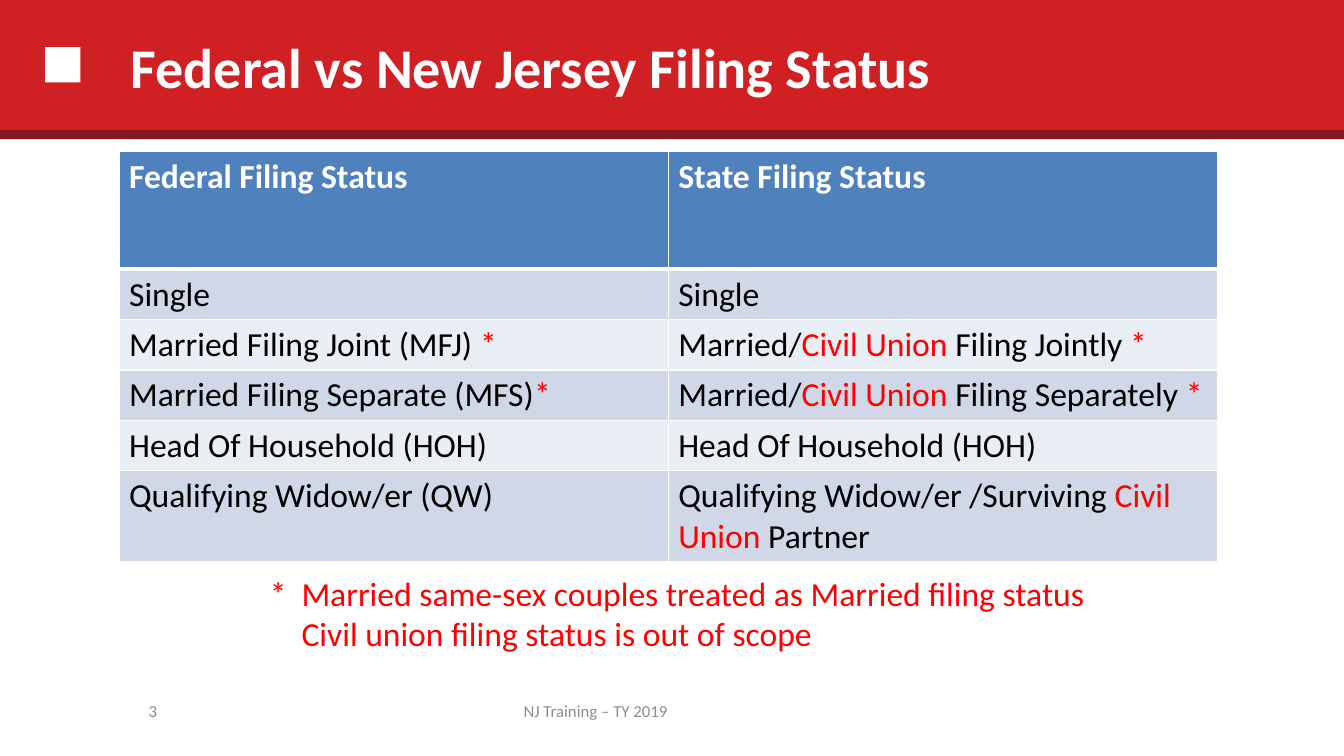
import pptx
import pptx.dml.color
import pptx.enum.shapes
import pptx.enum.text
import pptx.oxml
import pptx.oxml.ns
import pptx.util

Cm = pptx.util.Cm
Pt = pptx.util.Pt
RGBColor = pptx.dml.color.RGBColor
Align = pptx.enum.text.PP_ALIGN
Anchor = pptx.enum.text.MSO_ANCHOR

RED = RGBColor(0xCF, 0x21, 0x24)
DARK_RED = RGBColor(0x84, 0x17, 0x21)
ACCENT = RGBColor(0xFF, 0x00, 0x00)
BLUE = RGBColor(0x4F, 0x81, 0xBD)
BAND = RGBColor(0xD0, 0xD8, 0xE8)
PALE = RGBColor(0xE9, 0xED, 0xF4)
WHITE = RGBColor(0xFF, 0xFF, 0xFF)
BLACK = RGBColor(0x00, 0x00, 0x00)
GREY = RGBColor(0x8C, 0x8C, 0x8C)

WIDE_MARGINS = {
    "margin_left": Cm(0.33), "margin_right": Cm(0.33),
    "margin_top": Cm(0.18), "margin_bottom": Cm(0.18),
    "vertical_anchor": Anchor.MIDDLE, "word_wrap": True,
}

STATUSES = [
    ("Single", "Single"),
    ("Married Filing Joint (MFJ) |*", "Married/|Civil Union |Filing Jointly |*"),
    ("Married Filing Separate (MFS)|*", "Married/|Civil Union |Filing Separately |*"),
    ("Head Of Household (HOH)", "Head Of Household (HOH)"),
    ("Qualifying Widow/er (QW)", "Qualifying Widow/er /Surviving |Civil Union |Partner"),
]


class SlideBuilder:
    """Hold the text style and current page, and add each kind of element."""

    def __init__(self, deck, font="Calibri", size=24):
        self.page = deck.slides.add_slide(deck.slide_layouts[5])
        self.font = font
        self.size = size

    def apply(self, target, values):
        for name, value in values.items():
            setattr(target, name, value)

    def span(self, para, text, color, size=None, bold=False):
        span = para.add_run()
        span.text = text
        self.apply(span.font, {"name": self.font, "size": Pt(size or self.size), "bold": bold})
        span.font.color.rgb = color

    def bar(self, left, top, width, height, color):
        bar = self.page.shapes.add_shape(
            pptx.enum.shapes.MSO_SHAPE.RECTANGLE, Cm(left), Cm(top), Cm(width), Cm(height))
        bar.shadow.inherit = False
        bar.fill.solid()
        bar.fill.fore_color.rgb = color
        bar.line.fill.background()

    def title(self, text):
        title = self.page.shapes.title
        self.page.shapes._spTree.append(title._element)
        self.apply(title, {"left": Cm(2.97), "top": Cm(0.08),
                           "width": Cm(27.08), "height": Cm(3.18)})
        self.apply(title.text_frame, WIDE_MARGINS)
        title.text_frame.auto_size = pptx.enum.text.MSO_AUTO_SIZE.NONE
        para = title.text_frame.paragraphs[0]
        para.alignment = Align.LEFT
        self.span(para, text, WHITE, 40, True)

    def footer(self, left, width, text, alignment):
        box = self.page.shapes.add_textbox(Cm(left), Cm(17.4), Cm(width), Cm(1.02))
        self.apply(box.text_frame, WIDE_MARGINS)
        para = box.text_frame.paragraphs[0]
        para.alignment = alignment
        self.span(para, text, GREY, 12)

    def note(self, left, top, width, height, lines, hang):
        box = self.page.shapes.add_textbox(Cm(left), Cm(top), Cm(width), Cm(height))
        box.text_frame.word_wrap = True
        for index, line in enumerate(lines):
            para = box.text_frame.add_paragraph() if index else box.text_frame.paragraphs[0]
            settings = para._p.get_or_add_pPr()
            settings.set("marL", str(Cm(hang)))
            settings.set("indent", str(0 if index else -Cm(hang)))
            self.span(para, line, ACCENT)

    def cell(self, cell, text, fill, color, bold, top, bottom):
        settings = cell._tc.get_or_add_tcPr()
        for side, width in {"L": 1, "R": 1, "T": top, "B": bottom}.items():
            settings.append(pptx.oxml.parse_xml(
                f'<a:ln{side} {pptx.oxml.ns.nsdecls("a")} w="{Pt(width)}"><a:solidFill>'
                f'<a:srgbClr val="{WHITE}"/></a:solidFill></a:ln{side}>'))
        cell.fill.solid()
        cell.fill.fore_color.rgb = fill
        for index, part in enumerate(text.split("|")):
            self.span(cell.text_frame.paragraphs[0], part, ACCENT if index % 2 else color, bold=bold)

    def table(self, left, top, width, header, records, header_height, row_height):
        rows = [header, *records]
        height = header_height + row_height * len(records)
        table = self.page.shapes.add_table(
            len(rows), len(header), Cm(left), Cm(top), Cm(width), Cm(height)).table
        for number, record in enumerate(rows):
            is_header = number == 0
            table.rows[number].height = Cm(header_height if is_header else row_height)
            fill = BLUE if is_header else BAND if number % 2 else PALE
            for column, text in enumerate(record):
                self.cell(table.cell(number, column), text, fill,
                          WHITE if is_header else BLACK, is_header,
                          top=3 if number == 1 else 1, bottom=3 if is_header else 1)


def main():
    deck = pptx.Presentation()
    deck.slide_width, deck.slide_height = Cm(33.87), Cm(19.05)
    builder = SlideBuilder(deck)
    builder.bar(0, -0.03, 33.87, 3.38, RED)
    builder.bar(1.14, 1.19, 0.89, 0.89, WHITE)
    builder.bar(0, 3.28, 33.87, 0.23, DARK_RED)
    builder.footer(9.65, 10.72, "NJ Training – TY 2019", Align.CENTER)
    builder.footer(1.7, 2.59, "3", Align.RIGHT)
    builder.table(3, 3.81, 27.68, ("Federal Filing Status", "State Filing Status"),
                  STATUSES, 2.97, 1.04)
    builder.title("Federal vs New Jersey Filing Status")
    builder.note(6.55, 14.3, 22.02, 2.31,
                 ["*\tMarried same-sex couples treated as Married filing status",
                  "Civil union filing status is out of scope"], hang=0.8)
    deck.save("out.pptx")


if __name__ == "__main__":
    main()
